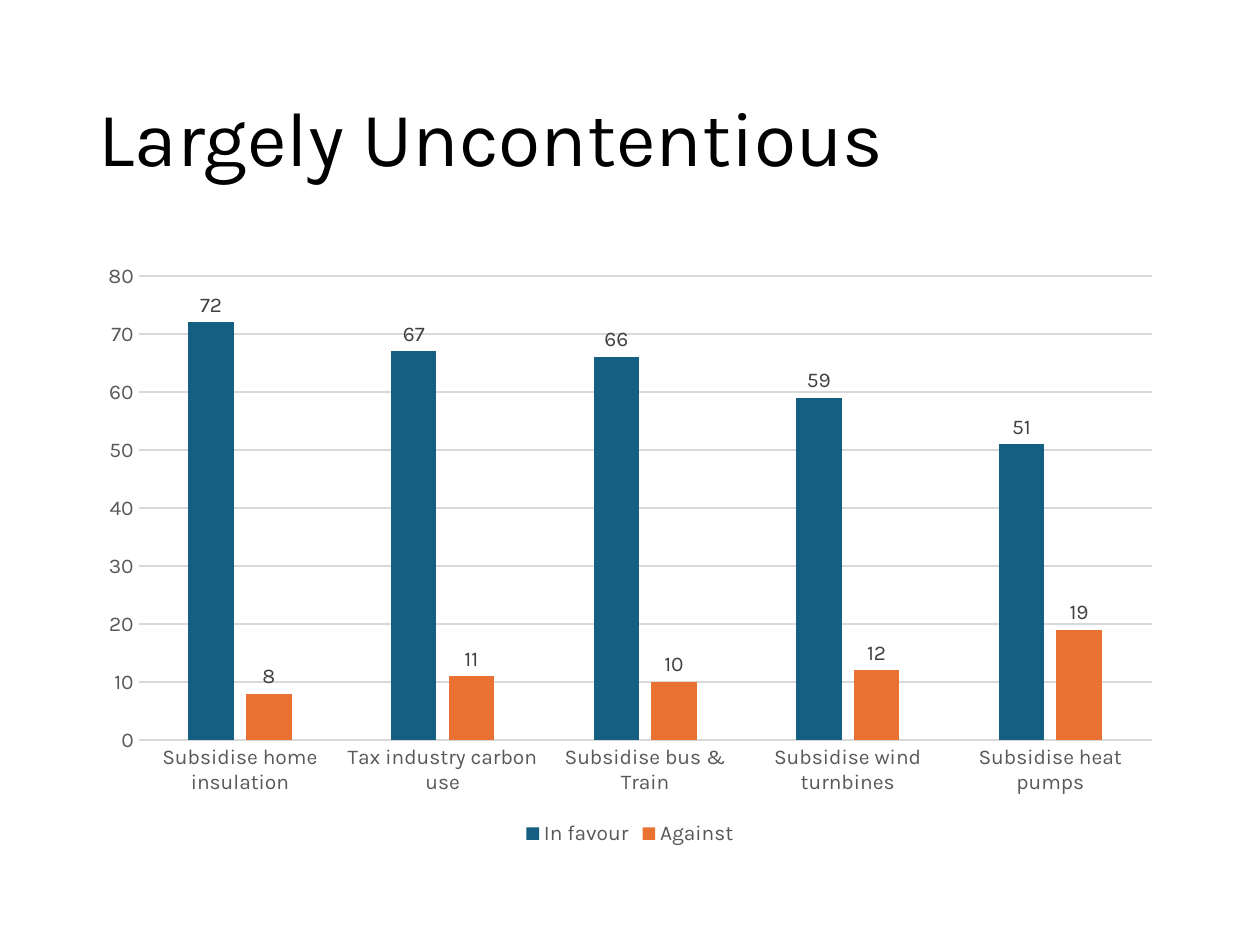
from dataclasses import dataclass

import pptx
import pptx.chart.data
import pptx.dml.color
import pptx.enum.chart
import pptx.enum.text
import pptx.util

Pt = pptx.util.Pt
RGBColor = pptx.dml.color.RGBColor


@dataclass(frozen=True)
class Theme:
    font: str = "Karla"
    title_size: float = 44
    chart_size: float = 10
    label_size: float = 12
    line_width: float = 0.75
    background: str = "FFFFFF"
    title: str = "000000"
    axis_text: str = "595959"
    label_text: str = "404040"
    rule: str = "D9D9D9"


@dataclass(frozen=True)
class Box:
    left: float
    top: float
    width: float
    height: float

    def lengths(self) -> tuple:
        return Pt(self.left), Pt(self.top), Pt(self.width), Pt(self.height)


@dataclass(frozen=True)
class Opinion:
    name: str
    percentages: tuple[int, ...]
    color: str


THEME = Theme()
TITLE_BOX = Box(49.5, 28.75, 621, 104.38)
CHART_BOX = Box(49.5, 143.75, 621, 342.63)
POLICIES = (
    "Subsidise home insulation",
    "Tax industry carbon use",
    "Subsidise bus & Train",
    "Subsidise wind turnbines",
    "Subsidise heat pumps",
)
OPINIONS = (
    Opinion("In favour", (72, 67, 66, 59, 51), "156082"),
    Opinion("Against", (8, 11, 10, 12, 19), "E97132"),
)


def style_font(font, size: float, color: str) -> None:
    font.name = THEME.font
    font.size = Pt(size)
    font.bold = False
    font.color.rgb = RGBColor.from_string(color)


def style_rule(line) -> None:
    line.color.rgb = RGBColor.from_string(THEME.rule)
    line.width = Pt(THEME.line_width)


def add_title(slide, text: str, box: Box) -> None:
    text_frame = slide.shapes.add_textbox(*box.lengths()).text_frame
    text_frame.word_wrap = True
    text_frame.vertical_anchor = pptx.enum.text.MSO_ANCHOR.MIDDLE
    text_frame.text = text
    paragraph = text_frame.paragraphs[0]
    paragraph.line_spacing = 0.9
    style_font(paragraph.runs[0].font, THEME.title_size, THEME.title)


def style_series(series, opinion: Opinion) -> None:
    series.format.fill.solid()
    series.format.fill.fore_color.rgb = RGBColor.from_string(opinion.color)
    series.invert_if_negative = False
    labels = series.data_labels
    labels.show_value = True
    labels.position = pptx.enum.chart.XL_LABEL_POSITION.OUTSIDE_END
    style_font(labels.font, THEME.label_size, THEME.label_text)


def add_opinion_chart(slide, opinions: tuple[Opinion, ...], box: Box) -> None:
    chart_data = pptx.chart.data.CategoryChartData()
    chart_data.categories = POLICIES
    for opinion in opinions:
        chart_data.add_series(opinion.name, opinion.percentages)
    chart = slide.shapes.add_chart(
        pptx.enum.chart.XL_CHART_TYPE.COLUMN_CLUSTERED, *box.lengths(), chart_data
    ).chart
    chart.has_title = False
    style_font(chart.font, THEME.chart_size, THEME.title)

    # Columns
    plot = chart.plots[0]
    plot.gap_width = 219
    plot.overlap = -27
    plot.vary_by_categories = False
    for series, opinion in zip(plot.series, opinions):
        style_series(series, opinion)

    # Axes and gridlines
    for axis in (chart.category_axis, chart.value_axis):
        axis.major_tick_mark = pptx.enum.chart.XL_TICK_MARK.NONE
        axis.minor_tick_mark = pptx.enum.chart.XL_TICK_MARK.NONE
        style_font(axis.tick_labels.font, THEME.label_size, THEME.axis_text)
    style_rule(chart.category_axis.format.line)
    chart.value_axis.format.line.fill.background()
    chart.value_axis.has_major_gridlines = True
    style_rule(chart.value_axis.major_gridlines.format.line)

    # Legend
    chart.has_legend = True
    chart.legend.position = pptx.enum.chart.XL_LEGEND_POSITION.BOTTOM
    chart.legend.include_in_layout = False
    style_font(chart.legend.font, THEME.label_size, THEME.axis_text)


def main() -> None:
    presentation = pptx.Presentation()
    presentation.slide_width = Pt(720)
    presentation.slide_height = Pt(540)
    slide = presentation.slides.add_slide(presentation.slide_layouts[6])
    slide.background.fill.solid()
    slide.background.fill.fore_color.rgb = RGBColor.from_string(THEME.background)

    add_title(slide, "Largely Uncontentious", TITLE_BOX)
    add_opinion_chart(slide, OPINIONS, CHART_BOX)
    presentation.save("out.pptx")


if __name__ == "__main__":
    main()
